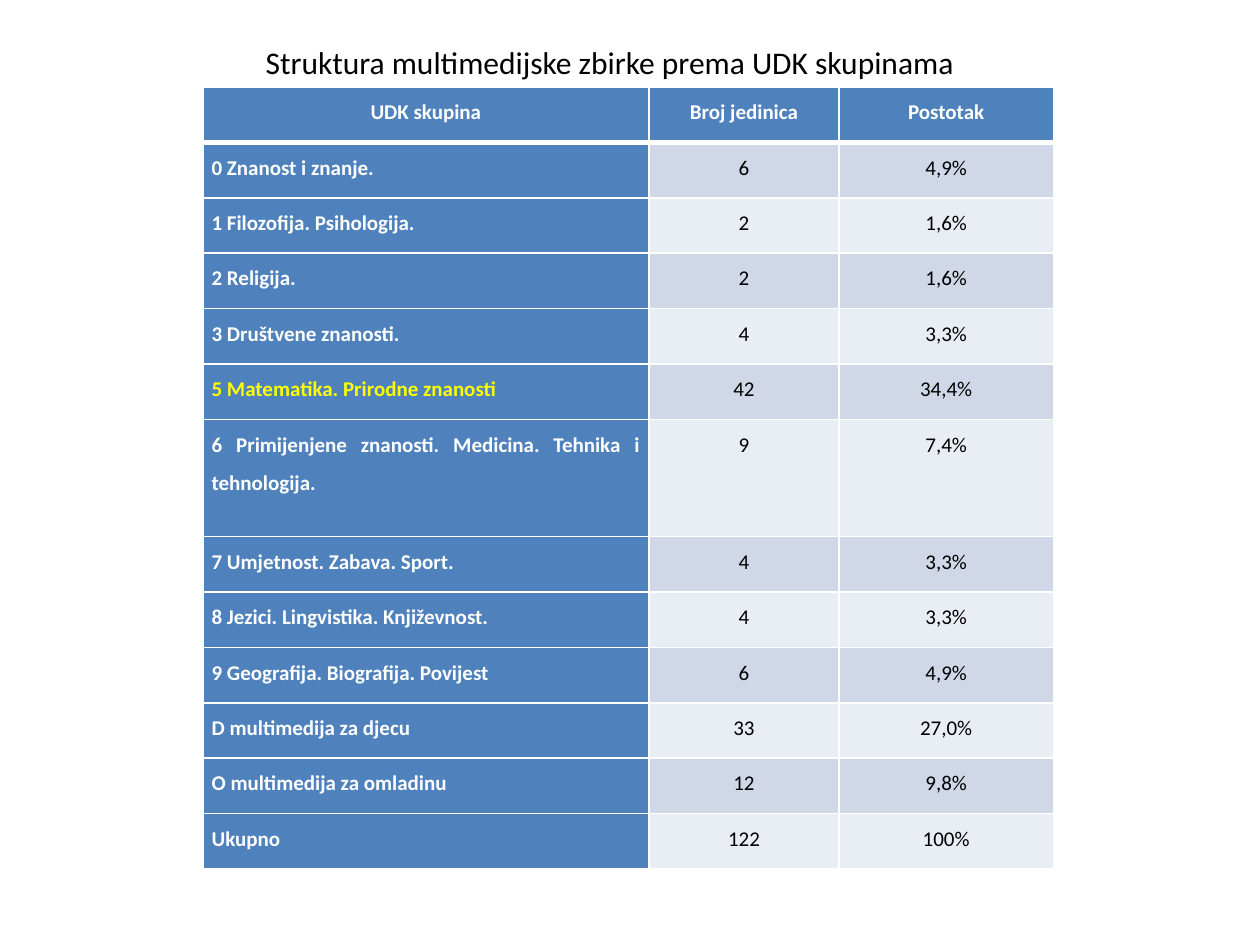
import pptx
import pptx.util
import pptx.dml.color
import pptx.enum.text
import pptx.oxml
import pptx.oxml.ns

TITLE = "Struktura multimedijske zbirke prema UDK skupinama"
HEADER = ("UDK skupina", "Broj jedinica", "Postotak")
GROUPS = [
    ("0 Znanost i znanje.", "6", "4,9%"),
    ("1 Filozofija. Psihologija.", "2", "1,6%"),
    ("2 Religija.", "2", "1,6%"),
    ("3 Društvene znanosti.", "4", "3,3%"),
    ("5 Matematika. Prirodne znanosti", "42", "34,4%"),
    ("6 Primijenjene znanosti. Medicina. Tehnika i tehnologija.", "9", "7,4%"),
    ("7 Umjetnost. Zabava. Sport.", "4", "3,3%"),
    ("8 Jezici. Lingvistika. Književnost.", "4", "3,3%"),
    ("9 Geografija. Biografija. Povijest", "6", "4,9%"),
    ("D multimedija za djecu", "33", "27,0%"),
    ("O multimedija za omladinu", "12", "9,8%"),
    ("Ukupno", "122", "100%"),
]
HIGHLIGHTED_ROW, TALL_ROW = 5, 6
COLUMN_WIDTHS = (3.54, 1.51, 1.7)
ROW_HEIGHT, TALL_HEIGHT = 0.44, 0.93
BLUE, BANDS = "4F81BD", ("E9EDF4", "D0D8E8")
WHITE, BLACK, YELLOW = "FFFFFF", "000000", "FFFF00"
ALIGN = pptx.enum.text.PP_ALIGN
inches = pptx.util.Inches


def color(value):
    return pptx.dml.color.RGBColor.from_string(value)


def write(para, text, size, ink, bold=False):
    span = para.add_run()
    span.text = text
    formats = {"name": "Calibri", "size": pptx.util.Pt(size), "bold": bold}
    for key, value in formats.items():
        setattr(span.font, key, value)
    span.font.color.rgb = color(ink)


def add_borders(cell, widths):
    properties = cell._tc.get_or_add_tcPr()
    for side, points in widths.items():
        properties.append(pptx.oxml.parse_xml(
            f'<a:ln{side} {pptx.oxml.ns.nsdecls("a")} w="{pptx.util.Pt(points)}">'
            f'<a:solidFill><a:srgbClr val="{WHITE}"/></a:solidFill></a:ln{side}>'))


def fill_cell(cell, text, row, column):
    is_label = row == 0 or column == 0
    add_borders(cell, {"L": 1, "R": 1, "T": 3 if row == 1 else 1, "B": 3 if row == 0 else 1})
    cell.fill.solid()
    cell.fill.fore_color.rgb = color(BLUE if is_label else BANDS[row % 2])
    margins = {"margin_left": 0.07, "margin_right": 0.07, "margin_top": 0, "margin_bottom": 0}
    for key, value in margins.items():
        setattr(cell, key, inches(value))
    para = cell.text_frame.paragraphs[0]
    para.alignment = ALIGN.JUSTIFY if row and not column else ALIGN.CENTER
    para.line_spacing = 1.5
    ink = WHITE if is_label else BLACK
    if row == HIGHLIGHTED_ROW and column == 0:
        ink = YELLOW
    write(para, text, 12, ink, is_label)


def main():
    deck = pptx.Presentation()
    deck.slide_width, deck.slide_height = inches(10), inches(7.5)
    page = deck.slides.add_slide(deck.slide_layouts[6])

    rows = [HEADER, *GROUPS]
    heights = [TALL_HEIGHT if row == TALL_ROW else ROW_HEIGHT for row in range(len(rows))]
    table = page.shapes.add_table(
        len(rows), len(HEADER), inches(1.61), inches(0.69),
        inches(sum(COLUMN_WIDTHS)), inches(sum(heights))).table
    for column, width in zip(table.columns, COLUMN_WIDTHS):
        column.width = inches(width)
    for row, (texts, height) in enumerate(zip(rows, heights)):
        table.rows[row].height = inches(height)
        for column, text in enumerate(texts):
            fill_cell(table.cell(row, column), text, row, column)

    box = page.shapes.add_textbox(inches(2.01), inches(0.29), inches(6.21), inches(0.4))
    box.text_frame.word_wrap = True
    box.text_frame.auto_size = pptx.enum.text.MSO_AUTO_SIZE.SHAPE_TO_FIT_TEXT
    write(box.text_frame.paragraphs[0], TITLE, 18, BLACK)

    deck.save("out.pptx")


if __name__ == "__main__":
    main()
